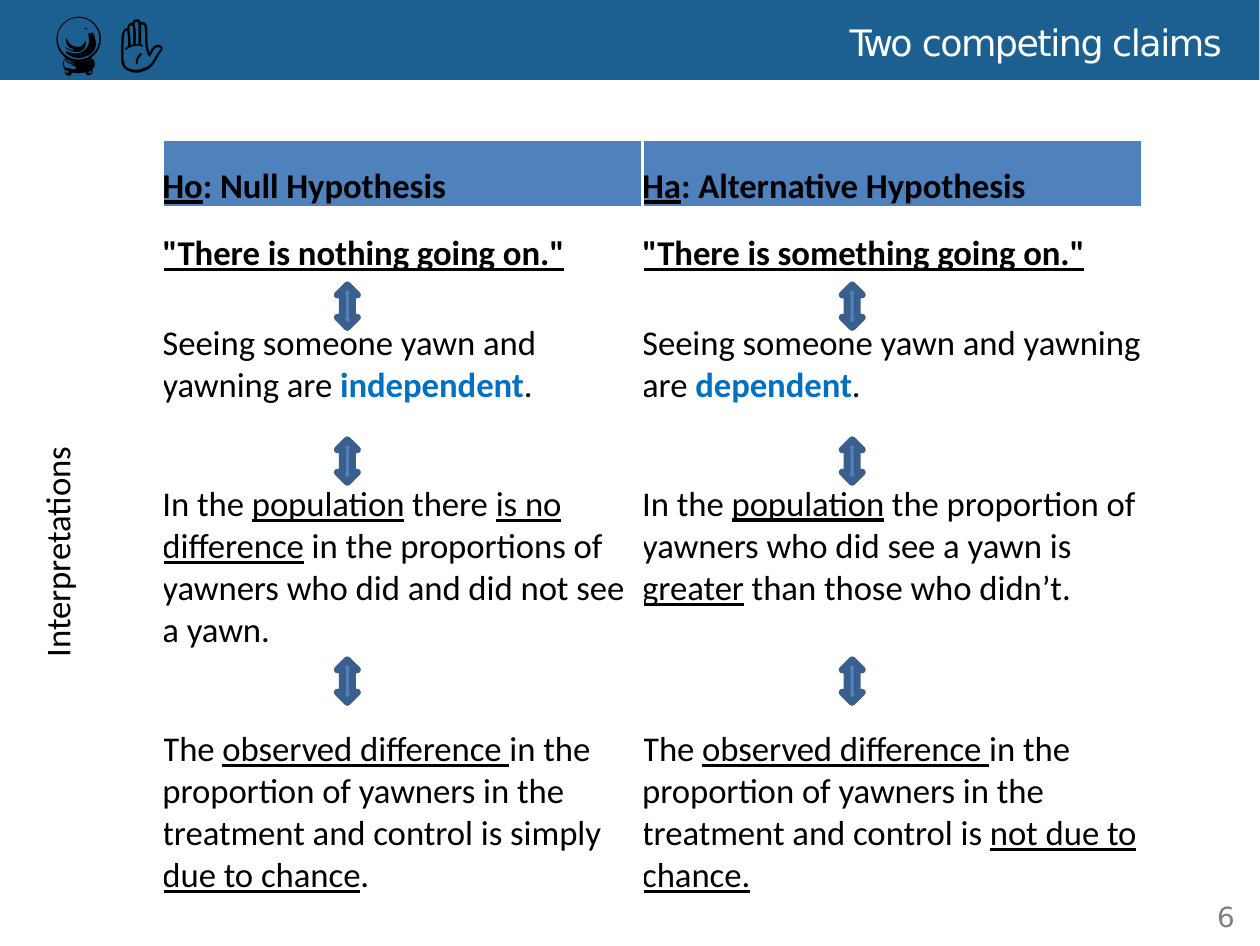
from itertools import product

from lxml.etree import SubElement
from pptx import Presentation
from pptx.dml.color import RGBColor
from pptx.enum.shapes import MSO_SHAPE as Shape
from pptx.enum.text import MSO_ANCHOR as Anchor, MSO_AUTO_SIZE as AutoSize, PP_ALIGN as Align
from pptx.oxml.ns import qn
from pptx.util import Inches, Pt

BLACK = RGBColor(0x00, 0x00, 0x00)
WHITE = RGBColor(0xFF, 0xFF, 0xFF)
GRAY = RGBColor(0x7F, 0x7F, 0x7F)
BAND_BLUE = RGBColor(0x1B, 0x60, 0x90)
HEADER_BLUE = RGBColor(0x4F, 0x81, 0xBD)
ARROW_EDGE = RGBColor(0x3A, 0x5F, 0x8C)
ACCENT_BLUE = RGBColor(0x00, 0x70, 0xC0)

PLAIN = {"name": "Calibri", "size": Pt(10), "bold": False, "underline": False, "color": BLACK}
UNDER = {**PLAIN, "underline": True}
BOLD = {**PLAIN, "bold": True}
STRONG = {**UNDER, "bold": True}
ACCENT = {**BOLD, "color": ACCENT_BLUE}
TITLE = {"name": "DejaVu Sans", "size": Pt(10.5), "color": WHITE}
NUMBER = {**TITLE, "size": Pt(8), "color": GRAY}
ICONS = {**PLAIN, "size": Pt(18)}

COLUMN_WIDTHS = [0.5, 1.92, 2]
ROW_HEIGHTS = [0.27, 0.27, 0.53, 0.98, 0.98]
SIDE_LABEL = "Interpretations"
HYPOTHESES = [
    [
        [("Ho", STRONG), (": Null Hypothesis", BOLD)],
        [('"There is nothing going on."', STRONG)],
        [("Seeing someone yawn and yawning are ", PLAIN), ("independent", ACCENT), (".", PLAIN)],
        [("In the ", PLAIN), ("population", UNDER), (" there ", PLAIN), ("is no difference", UNDER),
         (" in the proportions of yawners who did and did not see a yawn.", PLAIN)],
        [("The ", PLAIN), ("observed difference ", UNDER),
         ("in the proportion of yawners in the treatment and control is simply ", PLAIN),
         ("due to chance", UNDER), (".", PLAIN)],
    ],
    [
        [("Ha", STRONG), (": Alternative Hypothesis", BOLD)],
        [('"There is something going on."', STRONG)],
        [("Seeing someone yawn and yawning are ", PLAIN), ("dependent", ACCENT), (".", PLAIN)],
        [("In the ", PLAIN), ("population", UNDER),
         (" the proportion of yawners who did see a yawn is ", PLAIN),
         ("greater", UNDER), (" than those who didn’t.", PLAIN)],
        [("The ", PLAIN), ("observed difference ", UNDER),
         ("in the proportion of yawners in the treatment and control is ", PLAIN),
         ("not due to chance.", UNDER)],
    ],
]


def write_runs(paragraph, runs, spacings=()):
    """Add formatted runs, with optional letter spacing in hundredths of a point."""
    for text, style in runs:
        run = paragraph.add_run()
        run.text = text
        for name, value in style.items():
            if name == "color":
                run.font.color.rgb = value
            else:
                setattr(run.font, name, value)
    for run, spacing in zip(paragraph.runs, spacings):
        run.font._element.set("spc", str(spacing))


def place_text(shape, box, runs, spacings, top_inset, space_before):
    """Move a text shape to its box and fill it with one line."""
    for name, value in zip(("left", "top", "width", "height"), box):
        setattr(shape, name, Inches(value))
    frame = shape.text_frame
    settings = {"margin_left": 0, "margin_right": 0, "margin_bottom": 0,
                "margin_top": Inches(top_inset), "word_wrap": True,
                "auto_size": AutoSize.SHAPE_TO_FIT_TEXT, "vertical_anchor": Anchor.TOP}
    for name, value in settings.items():
        setattr(frame, name, value)
    paragraph = frame.paragraphs[0]
    paragraph.alignment = Align.LEFT
    paragraph.space_before = Pt(space_before)
    paragraph._p.get_or_add_pPr().set("marL", str(Inches(0.01)))
    write_runs(paragraph, runs, spacings)


def add_solid(slide, kind, box, fill):
    """Add a filled preset shape without shadow or outline."""
    shape = slide.shapes.add_shape(kind, *map(Inches, box))
    shape.shadow.inherit = False
    shape.fill.solid()
    shape.fill.fore_color.rgb = fill
    shape.line.fill.background()
    return shape


def add_header(slide, left, top, width, height):
    """Draw the title band with its icons and title."""
    band = add_solid(slide, Shape.RECTANGLE, (left, top, width, height), BAND_BLUE)
    slide.shapes._spTree.insert(2, band._element)
    place_text(slide.shapes.title, (left + width - 1.65, top + 0.06, 1.54, 0.21),
               [("Two ", TITLE), ("competing claims", TITLE)], (-70, -40), 0.02, 1.4)
    icons = slide.shapes.add_textbox(*map(Inches, (left + 0.12, top - 0.04, 0.76, 0.4)))
    icons.text_frame.word_wrap = False
    write_runs(icons.text_frame.paragraphs[0], [("🔮 ✋", ICONS)])


def format_cell(cell, fill=None):
    """Give a cell white borders, no margins and its fill."""
    properties = cell._tc.get_or_add_tcPr()
    for side in ("lnL", "lnR", "lnT", "lnB"):
        line = SubElement(properties, qn(f"a:{side}"), w=str(Pt(1)))
        solid = SubElement(line, qn("a:solidFill"))
        SubElement(solid, qn("a:srgbClr"), val=str(WHITE))
    for side in ("left", "right", "top", "bottom"):
        setattr(cell, f"margin_{side}", 0)
    cell.vertical_anchor = Anchor.BOTTOM
    if fill is None:
        cell.fill.background()
    else:
        cell.fill.solid()
        cell.fill.fore_color.rgb = fill


def add_hypotheses(slide, left, top, width, height):
    """Build the table that compares both hypotheses."""
    table = slide.shapes.add_table(len(ROW_HEIGHTS), len(COLUMN_WIDTHS),
                                   *map(Inches, (left, top, width, height))).table
    table.first_row = table.horz_banding = False
    for column, column_width in zip(table.columns, COLUMN_WIDTHS):
        column.width = Inches(column_width)
    for row, row_height in zip(table.rows, ROW_HEIGHTS):
        row.height = Inches(row_height)
    for row in range(len(ROW_HEIGHTS)):
        format_cell(table.cell(row, 0))
        for column, claims in enumerate(HYPOTHESES, 1):
            cell = table.cell(row, column)
            format_cell(cell, HEADER_BLUE if row == 0 else None)
            write_runs(cell.text_frame.paragraphs[0], claims[row])
    table.cell(3, 2).margin_bottom = Inches(0.17)
    label = table.cell(1, 0)
    label.merge(table.cell(len(ROW_HEIGHTS) - 1, 0))
    label._tc.get_or_add_tcPr().set("vert", "vert270")
    paragraph = label.text_frame.paragraphs[0]
    paragraph.alignment = Align.CENTER
    write_runs(paragraph, [(SIDE_LABEL, PLAIN)])
    table.cell(0, 0).text_frame.paragraphs[0].font.size = Pt(10)


def add_arrows(slide, left, top):
    """Link successive statements of both columns with double arrows."""
    for across, down in product((1.2, 3.22), (0.58, 1.2, 2.08)):
        arrow = add_solid(slide, Shape.UP_DOWN_ARROW,
                          (left + across, top + down, 0.08, 0.17), HEADER_BLUE)
        arrow.line.color.rgb = ARROW_EDGE
        arrow.line.width = Pt(2)


def build_claims_slide(presentation, width, height):
    """Compose the slide on the two competing claims."""
    slide = presentation.slides.add_slide(presentation.slide_layouts[5])
    add_header(slide, 0, 0, width, 0.32)
    number = slide.shapes.add_textbox(0, 0, 0, 0)
    place_text(number, (width - 0.18, height - 0.19, 0.09, 0.16), [("6", NUMBER)], (-70,), 0.01, 0.6)
    add_hypotheses(slide, 0.15, 0.56, sum(COLUMN_WIDTHS), sum(ROW_HEIGHTS))
    add_arrows(slide, 0.15, 0.56)


def main():
    """Create and save the presentation."""
    presentation = Presentation()
    presentation.slide_width = Pt(363)
    presentation.slide_height = Pt(272.5)
    build_claims_slide(presentation, 5.04, 3.78)
    presentation.save("out.pptx")


if __name__ == "__main__":
    main()
